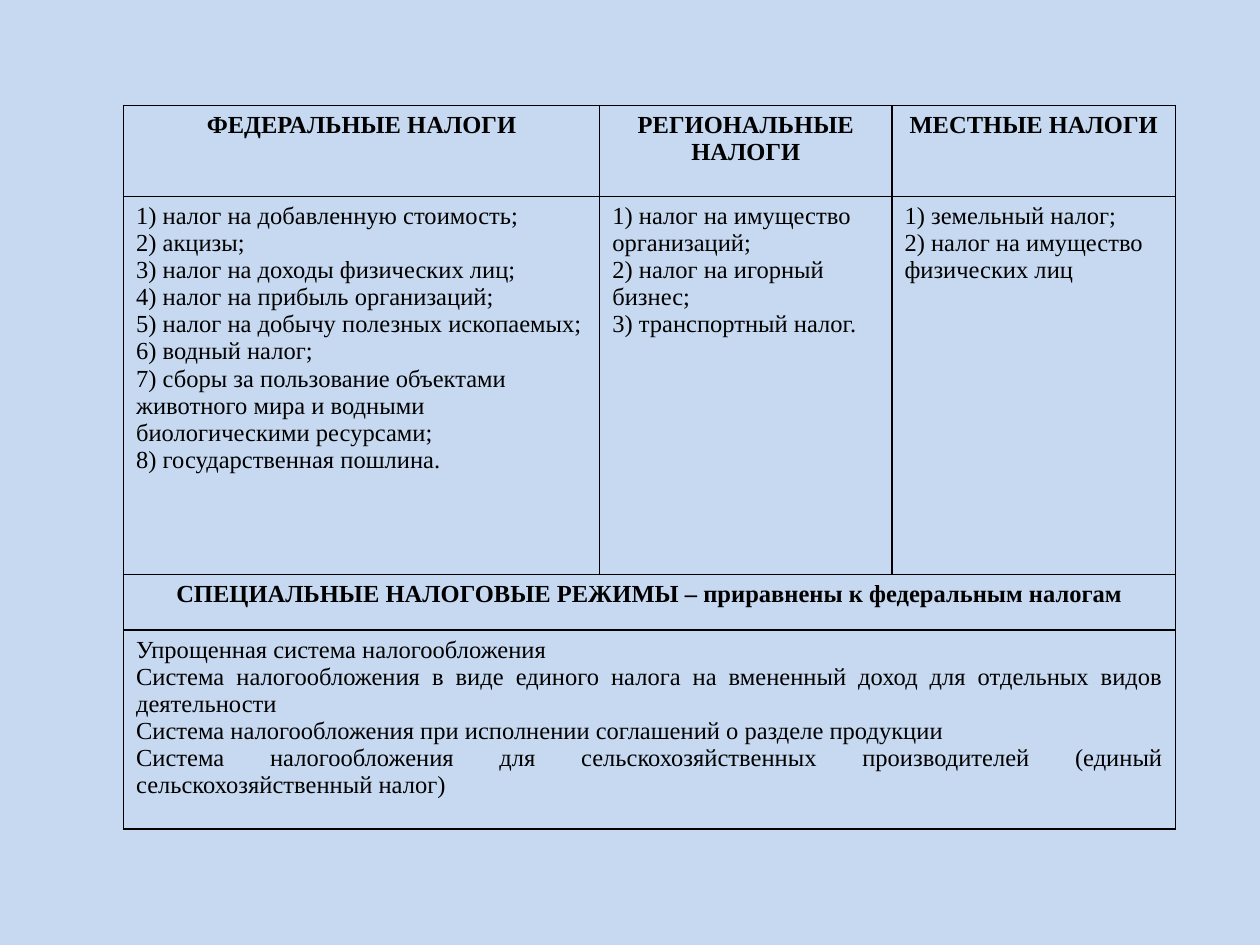
from lxml import etree
from pptx import Presentation
from pptx.dml.color import RGBColor
from pptx.enum.text import PP_ALIGN
from pptx.oxml.ns import qn
from pptx.util import Cm, Pt

LEFT, CENTER, JUSTIFY = PP_ALIGN.LEFT, PP_ALIGN.CENTER, PP_ALIGN.JUSTIFY
BLANK_LAYOUT = 6
FONT = "Times New Roman"
BACKGROUND, INK = "C6D9F0", "000000"

COLUMN_WIDTHS = [9.6, 5.89, 5.72]
ROW_HEIGHTS = [1.83, 7.62, 1.12, 4.01]

TAXES = {
    "ФЕДЕРАЛЬНЫЕ НАЛОГИ": [
        "1) налог на добавленную стоимость;",
        "2) акцизы;",
        "3) налог на доходы физических лиц;",
        "4) налог на прибыль организаций;",
        "5) налог на добычу полезных ископаемых;",
        "6) водный налог;",
        "7) сборы за пользование объектами животного мира и водными биологическими ресурсами;",
        "8) государственная пошлина.",
    ],
    "РЕГИОНАЛЬНЫЕ НАЛОГИ": [
        "1) налог на имущество организаций;",
        "2) налог на игорный бизнес;",
        "3) транспортный налог.",
    ],
    "МЕСТНЫЕ НАЛОГИ": [
        "1) земельный налог;",
        "2) налог на имущество физических лиц",
    ],
}
REGIMES_HEADING = "СПЕЦИАЛЬНЫЕ НАЛОГОВЫЕ РЕЖИМЫ – приравнены к федеральным налогам"
REGIMES = [
    "Упрощенная система налогообложения",
    "Система налогообложения в виде единого налога на вмененный доход для отдельных видов деятельности",
    "Система налогообложения при исполнении соглашений о разделе продукции",
    "Система налогообложения для сельскохозяйственных производителей (единый сельскохозяйственный налог)",
]


def color(value):
    """Turn a hex string into a colour."""
    return RGBColor.from_string(value)


def write(frame, lines, size=14, bold=False, align=LEFT, ink=INK):
    """Write one paragraph per line with a shared format."""
    for index, line in enumerate(lines):
        paragraph = frame.add_paragraph() if index else frame.paragraphs[0]
        paragraph.alignment = align
        run = paragraph.add_run()
        run.text = line
        run.font.name = FONT
        run.font.size = Pt(size)
        run.font.bold = bold
        run.font.color.rgb = color(ink)


def outline(cell, ink=INK, width=1):
    """Draw all four borders of a cell and clear its fill."""
    properties = cell._tc.get_or_add_tcPr()
    for side in ("a:lnL", "a:lnR", "a:lnT", "a:lnB"):
        border = etree.SubElement(properties, qn(side), w=str(Pt(width)))
        fill = etree.SubElement(border, qn("a:solidFill"))
        etree.SubElement(fill, qn("a:srgbClr"), val=ink)
    cell.fill.background()


def tax_table(slide, left, top):
    """Place the table of taxes and special regimes at the given corner."""
    width, height = sum(COLUMN_WIDTHS), sum(ROW_HEIGHTS)
    table = slide.shapes.add_table(
        len(ROW_HEIGHTS), len(COLUMN_WIDTHS), Cm(left), Cm(top), Cm(width), Cm(height)
    ).table
    table.first_row = table.horz_banding = False
    for column, column_width in zip(table.columns, COLUMN_WIDTHS):
        column.width = Cm(column_width)
    for row, row_height in zip(table.rows, ROW_HEIGHTS):
        row.height = Cm(row_height)
    for cell in table.iter_cells():
        outline(cell)

    for index, (heading, taxes) in enumerate(TAXES.items()):
        write(table.cell(0, index).text_frame, [heading], bold=True, align=CENTER)
        write(table.cell(1, index).text_frame, taxes)

    last = len(COLUMN_WIDTHS) - 1
    for row in (2, 3):
        table.cell(row, 0).merge(table.cell(row, last))
    write(table.cell(2, 0).text_frame, [REGIMES_HEADING], bold=True, align=CENTER)
    write(table.cell(3, 0).text_frame, REGIMES, align=JUSTIFY)


def main():
    """Build the slide and save it."""
    deck = Presentation()
    deck.slide_width, deck.slide_height = Cm(25.4), Cm(19.05)
    slide = deck.slides.add_slide(deck.slide_layouts[BLANK_LAYOUT])
    slide.background.fill.solid()
    slide.background.fill.fore_color.rgb = color(BACKGROUND)
    tax_table(slide, left=2.49, top=2.13)
    deck.save("out.pptx")


if __name__ == "__main__":
    main()
